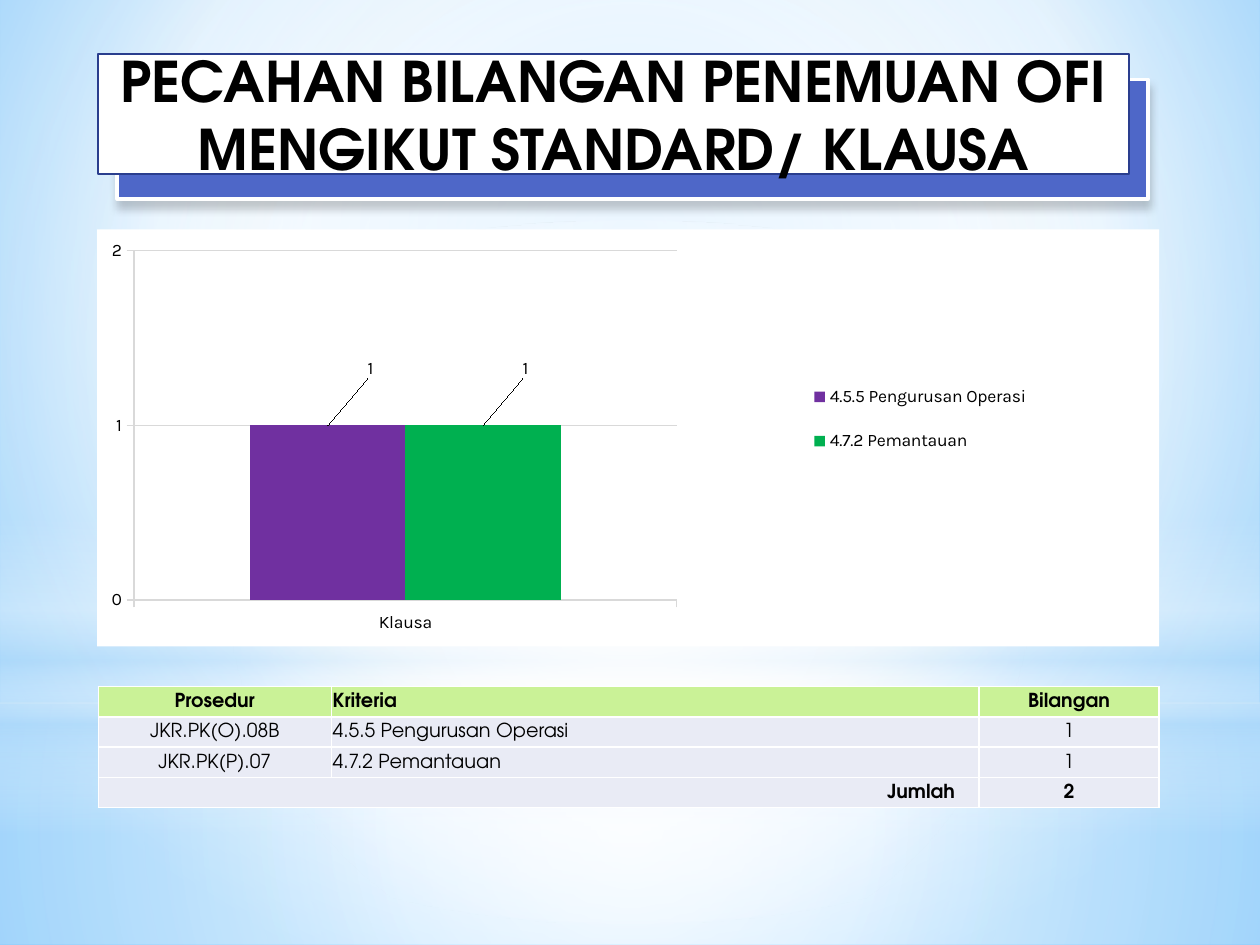
"""Build the slide of OFI findings by standard and clause."""
from dataclasses import dataclass
from typing import Any, NamedTuple

import pptx
import pptx.chart.data
import pptx.dml.color
import pptx.enum.chart
import pptx.enum.shapes
import pptx.enum.text
import pptx.oxml
import pptx.oxml.ns
import pptx.util

WIDTH, HEIGHT = 10, 7.5
TITLE_FONT, CHART_FONT = "TeX Gyre Adventor", "Karla"
BLACK, WHITE, GRID = "000000", "FFFFFF", "D9D9D9"
NAMES = pptx.oxml.ns.nsdecls("a", "c")
ALIGN = pptx.enum.text.PP_ALIGN
MIDDLE = pptx.enum.text.MSO_ANCHOR.MIDDLE
RECT = pptx.enum.shapes.MSO_SHAPE.RECTANGLE
OVAL = pptx.enum.shapes.MSO_SHAPE.OVAL


class Area(NamedTuple):
    """Hold a position and size as percentages of the slide."""
    left: float
    top: float
    width: float
    height: float

    def lengths(self) -> list[int]:
        """Return the four lengths for python-pptx."""
        sides = (WIDTH, HEIGHT, WIDTH, HEIGHT)
        return [pptx.util.Inches(side * share / 100) for side, share in zip(sides, self)]


class Stop(NamedTuple):
    """Hold a gradient stop in percentages."""
    place: int
    colour: str
    opacity: int = 100


@dataclass
class Glow:
    """Describe one gradient layer of the backdrop."""
    area: Area
    stops: list[Stop]
    kind: Any = RECT
    centre: tuple | None = (50, 50, 50, 50)


@dataclass
class Clause:
    """Describe one clause and its findings."""
    procedure: str
    name: str
    count: int
    colour: str


GLOWS = [
    Glow(Area(0, 74.4, 100, 25.6),
         [Stop(0, WHITE, 91), Stop(37, WHITE, 76), Stop(100, "B4DCFA", 79)]),
    Glow(Area(0, 0, 100, 74.4),
         [Stop(0, WHITE, 89), Stop(48, WHITE, 62), Stop(100, "B4DCFA", 79)]),
    Glow(Area(0, 54.93, 100, 33.33),
         [Stop(0, WHITE, 0), Stop(29, WHITE, 30), Stop(45, "B4DCFA", 40),
          Stop(55, WHITE, 26), Stop(65, "B4DCFA", 60), Stop(100, WHITE, 0)], centre=None),
    Glow(Area(0, 23.33, 100, 74.4), [Stop(0, WHITE), Stop(56, WHITE, 0)], OVAL),
]
CLAUSES = [
    Clause("JKR.PK(O).08B", "4.5.5 Pengurusan Operasi", 1, "7030A0"),
    Clause("JKR.PK(P).07", "4.7.2 Pemantauan", 1, "00B050"),
]


def colour(value: str) -> pptx.dml.color.RGBColor:
    """Turn a hex string into a colour."""
    return pptx.dml.color.RGBColor.from_string(value)


def apply(target: Any, values: dict) -> None:
    """Set each named attribute on the target."""
    for name, value in values.items():
        setattr(target, name, value)


def paint(fill: Any, value: str) -> None:
    """Give a solid fill."""
    fill.solid()
    fill.fore_color.rgb = colour(value)


def outline(line: Any, value: str, points: float) -> None:
    """Give a solid line."""
    paint(line.fill, value)
    line.width = pptx.util.Pt(points)


def style(font: Any, name: str, size: float, bold: bool = False) -> None:
    """Set a black font."""
    apply(font, {"name": name, "size": pptx.util.Pt(size), "bold": bold})
    font.color.rgb = colour(BLACK)


def blend(fill: Any, root: Any, stops: list[Stop], centre: tuple | None) -> None:
    """Give a circular gradient, or a vertical one without a centre."""
    fill.gradient()
    marks = "".join(
        f'<a:gs pos="{stop.place * 1000}"><a:srgbClr val="{stop.colour}">'
        f'<a:alpha val="{stop.opacity * 1000}"/></a:srgbClr></a:gs>' for stop in stops)
    course = '<a:lin ang="5400000" scaled="0"/>'
    if centre:
        edges = " ".join(f'{side}="{share * 1000}"' for side, share in zip("ltrb", centre))
        course = f'<a:path path="circle"><a:fillToRect {edges}/></a:path>'
    old = next(root.iter(pptx.oxml.ns.qn("a:gradFill")))
    old.getparent().replace(old, pptx.oxml.parse_xml(
        f'<a:gradFill {NAMES} rotWithShape="1"><a:gsLst>{marks}</a:gsLst>{course}</a:gradFill>'))


def draw_glow(page: Any, glow: Glow) -> None:
    """Draw one backdrop layer."""
    shape = page.shapes.add_shape(glow.kind, *glow.area.lengths())
    shape.shadow.inherit = False
    shape.line.fill.background()
    blend(shape.fill, shape.element, glow.stops, glow.centre)


def draw_panel(group: Any, area: Area, fill: str, line: str, points: float) -> Any:
    """Draw one panel of the title."""
    panel = group.shapes.add_shape(RECT, *area.lengths())
    panel.shadow.inherit = False
    paint(panel.fill, fill)
    outline(panel.line, line, points)
    return panel


def draw_title(page: Any) -> None:
    """Draw the title panel over its shadowed back panel."""
    group = page.shapes.add_group_shape()
    back = draw_panel(group, Area(9.3, 8.4, 81.8, 12.67), "4E67C8", WHITE, 2)
    next(back.element.iter(pptx.oxml.ns.qn("a:effectLst"))).append(pptx.oxml.parse_xml(
        f'<a:outerShdw {NAMES} blurRad="63500" dist="50800" dir="5400000" rotWithShape="0">'
        '<a:srgbClr val="000000"><a:alpha val="20000"/></a:srgbClr></a:outerShdw>'))
    front = draw_panel(group, Area(7.8, 5.73, 81.8, 12.67), WHITE, "2A3E8E", 1.25)
    apply(front.text_frame, {"word_wrap": True, "vertical_anchor": MIDDLE})
    para = front.text_frame.paragraphs[0]
    para.text = "PECAHAN BILANGAN PENEMUAN OFI\vMENGIKUT STANDARD/ KLAUSA"
    para.alignment = ALIGN.CENTER
    for span in para.runs:
        style(span.font, TITLE_FONT, 32, True)


def layout(values: dict, inner: bool = False) -> Any:
    """Make a manual chart layout."""
    modes = {"xMode": "edge", "yMode": "edge"} if "w" in values else {}
    target = {"layoutTarget": "inner"} if inner else {}
    marks = "".join(f'<c:{name} val="{value}"/>'
                    for name, value in {**target, **modes, **values}.items())
    return pptx.oxml.parse_xml(
        f"<c:layout {NAMES}><c:manualLayout>{marks}</c:manualLayout></c:layout>")


def draw_chart(page: Any) -> None:
    """Draw the clustered column chart of clauses."""
    enums, qn = pptx.enum.chart, pptx.oxml.ns.qn
    data = pptx.chart.data.CategoryChartData()
    data.categories = ["Klausa"]
    for clause in CLAUSES:
        data.add_series(clause.name, [clause.count])
    chart = page.shapes.add_chart(enums.XL_CHART_TYPE.COLUMN_CLUSTERED,
                                  *Area(7.7, 24.27, 84.3, 44.13).lengths(), data).chart
    style(chart.font, CHART_FONT, 10)
    apply(chart, {"has_title": False, "has_legend": True})
    apply(chart.legend, {"position": enums.XL_LEGEND_POSITION.RIGHT, "include_in_layout": False})
    apply(chart.value_axis, {"minimum_scale": 0, "maximum_scale": 2, "major_unit": 1,
                             "has_major_gridlines": True})
    outline(chart.value_axis.major_gridlines.format.line, GRID, 0.75)
    for axis in (chart.category_axis, chart.value_axis):
        axis.major_tick_mark = enums.XL_TICK_MARK.OUTSIDE
        outline(axis.format.line, GRID, 0.75)
    plot = chart.plots[0]
    apply(plot, {"gap_width": 150, "overlap": 0, "vary_by_categories": False})
    for series, clause in zip(plot.series, CLAUSES):
        paint(series.format.fill, clause.colour)
        series.points[0].data_label.position = enums.XL_LABEL_POSITION.OUTSIDE_END
        series.data_labels.show_value = True
        label = next(series._element.iter(qn("c:dLbl")))
        label.find(qn("c:idx")).addnext(layout({"x": 0.04, "y": -0.1}))
    root = chart._chartSpace
    area = next(root.iter(qn("c:plotArea")))
    for old in area.findall(qn("c:layout")):
        area.remove(old)
    area.insert(0, layout({"x": 0.035, "y": 0.051, "w": 0.511, "h": 0.838}, True))
    next(root.iter(qn("c:legendPos"))).addnext(
        layout({"x": 0.65, "y": 0.32, "w": 0.25, "h": 0.27}))
    root.find(qn("c:txPr")).addprevious(pptx.oxml.parse_xml(
        f'<c:spPr {NAMES}><a:solidFill><a:srgbClr val="{WHITE}"/></a:solidFill>'
        "<a:ln><a:noFill/></a:ln></c:spPr>"))


def draw_cell(cell: Any, text: str, align: Any, fill: str, bold: bool, right: float) -> None:
    """Fill, border and write one table cell."""
    apply(cell, {"vertical_anchor": MIDDLE, "margin_left": pptx.util.Inches(0.01),
                 "margin_top": pptx.util.Inches(0.01), "margin_bottom": 0,
                 "margin_right": pptx.util.Inches(right)})
    para = cell.text_frame.paragraphs[0]
    para.alignment = align
    style(para.font, TITLE_FONT, 11, bold)
    if text:
        span = para.add_run()
        span.text = text
        style(span.font, TITLE_FONT, 11, bold)
    paint(cell.fill, fill)
    for index, side in enumerate("LRTB"):
        cell._tc.get_or_add_tcPr().insert(index, pptx.oxml.parse_xml(
            f'<a:ln{side} {NAMES} w="12700"><a:solidFill><a:srgbClr val="{WHITE}"/>'
            f"</a:solidFill></a:ln{side}>"))


def draw_table(page: Any) -> None:
    """Draw the table of clauses with its total."""
    total = str(sum(clause.count for clause in CLAUSES))
    rows = [("Prosedur", "Kriteria", "Bilangan"),
            *((clause.procedure, clause.name, str(clause.count)) for clause in CLAUSES),
            ("Jumlah", "", total)]
    last = len(rows) - 1
    table = page.shapes.add_table(len(rows), 3, *Area(7.8, 72.67, 84.2, 12.8).lengths()).table
    apply(table, {"first_row": False, "horz_banding": False})
    for column, width in zip(table.columns, (1.85, 5.14, 1.43)):
        column.width = pptx.util.Inches(width)
    for row, texts in enumerate(rows):
        for column, text in enumerate(texts):
            summed = row == last and column == 0
            align = ALIGN.RIGHT if summed else (ALIGN.CENTER, ALIGN.LEFT, ALIGN.CENTER)[column]
            draw_cell(table.cell(row, column), text, align, "E9EBF5" if row else "CAF297",
                      row in (0, last), 0.19 if summed else 0.01)
    table.cell(last, 0).merge(table.cell(last, 1))


def main() -> None:
    """Build and save the deck."""
    deck = pptx.Presentation()
    apply(deck, {"slide_width": pptx.util.Inches(WIDTH), "slide_height": pptx.util.Inches(HEIGHT)})
    page = deck.slides.add_slide(deck.slide_layouts[6])
    blend(page.background.fill, page.element,
          [Stop(0, "9ED5FF"), Stop(60, WHITE), Stop(100, "5BB9FF")], (20, 10, 20, 60))
    for glow in GLOWS:
        draw_glow(page, glow)
    draw_chart(page)
    draw_table(page)
    draw_title(page)
    deck.save("out.pptx")


if __name__ == "__main__":
    main()
